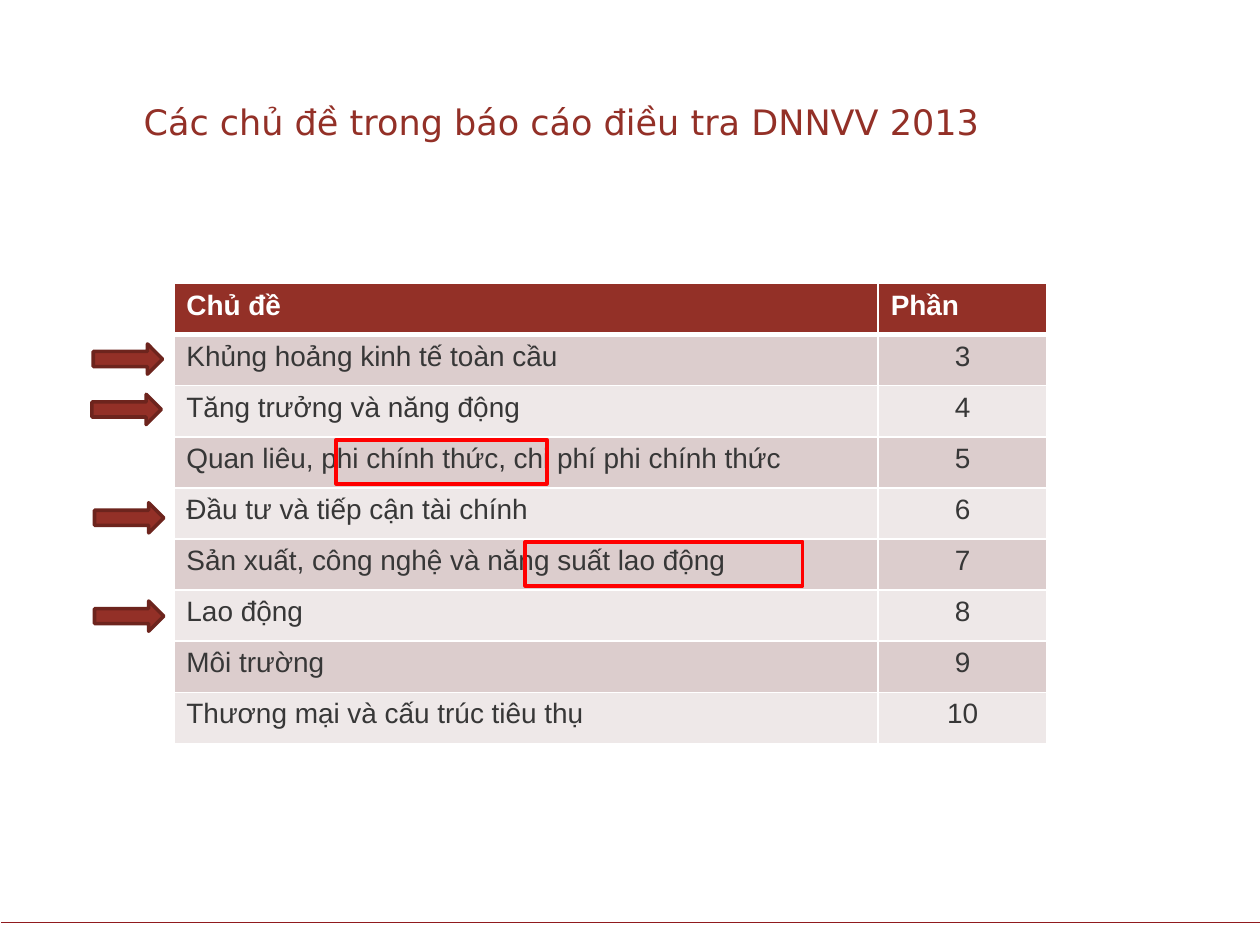
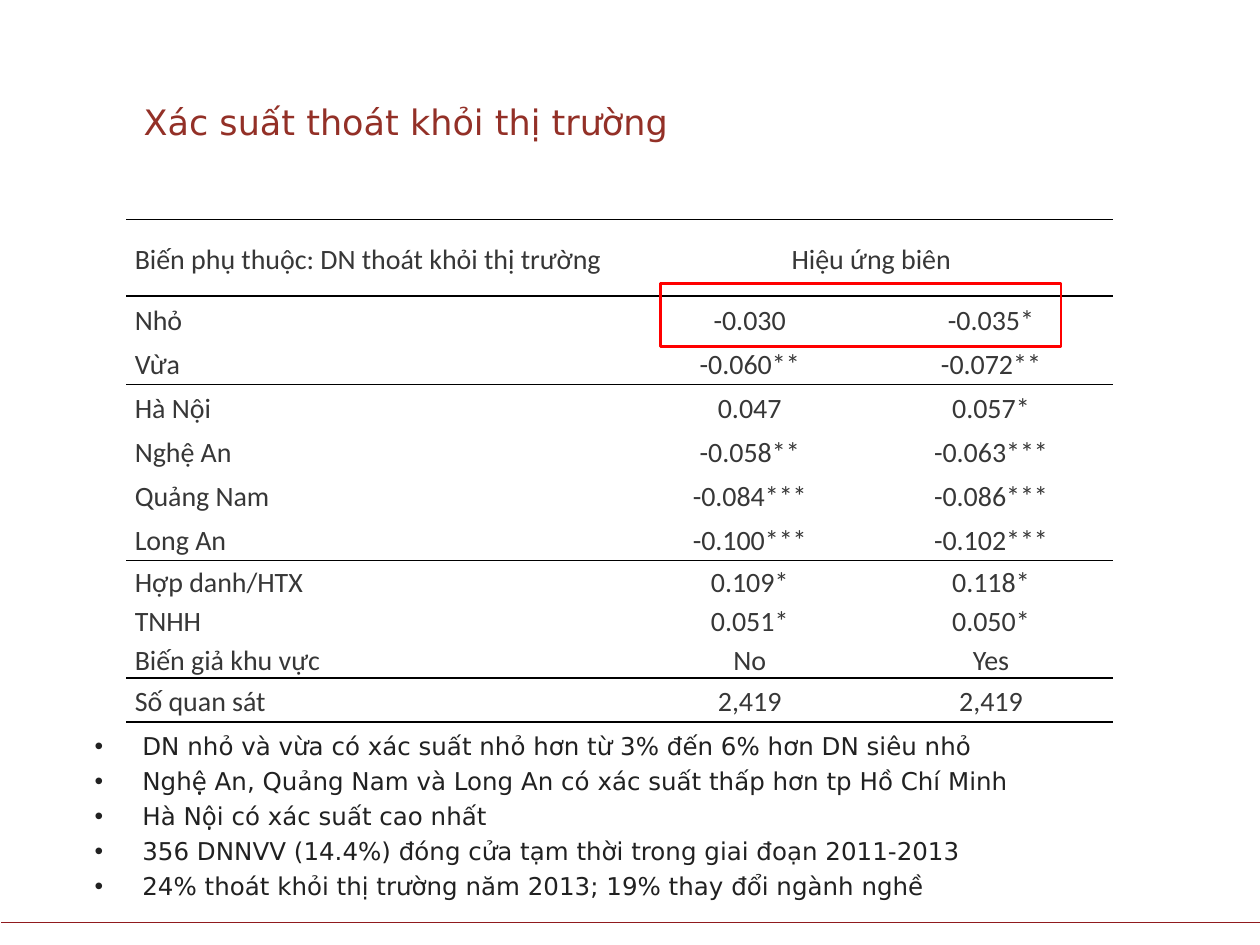
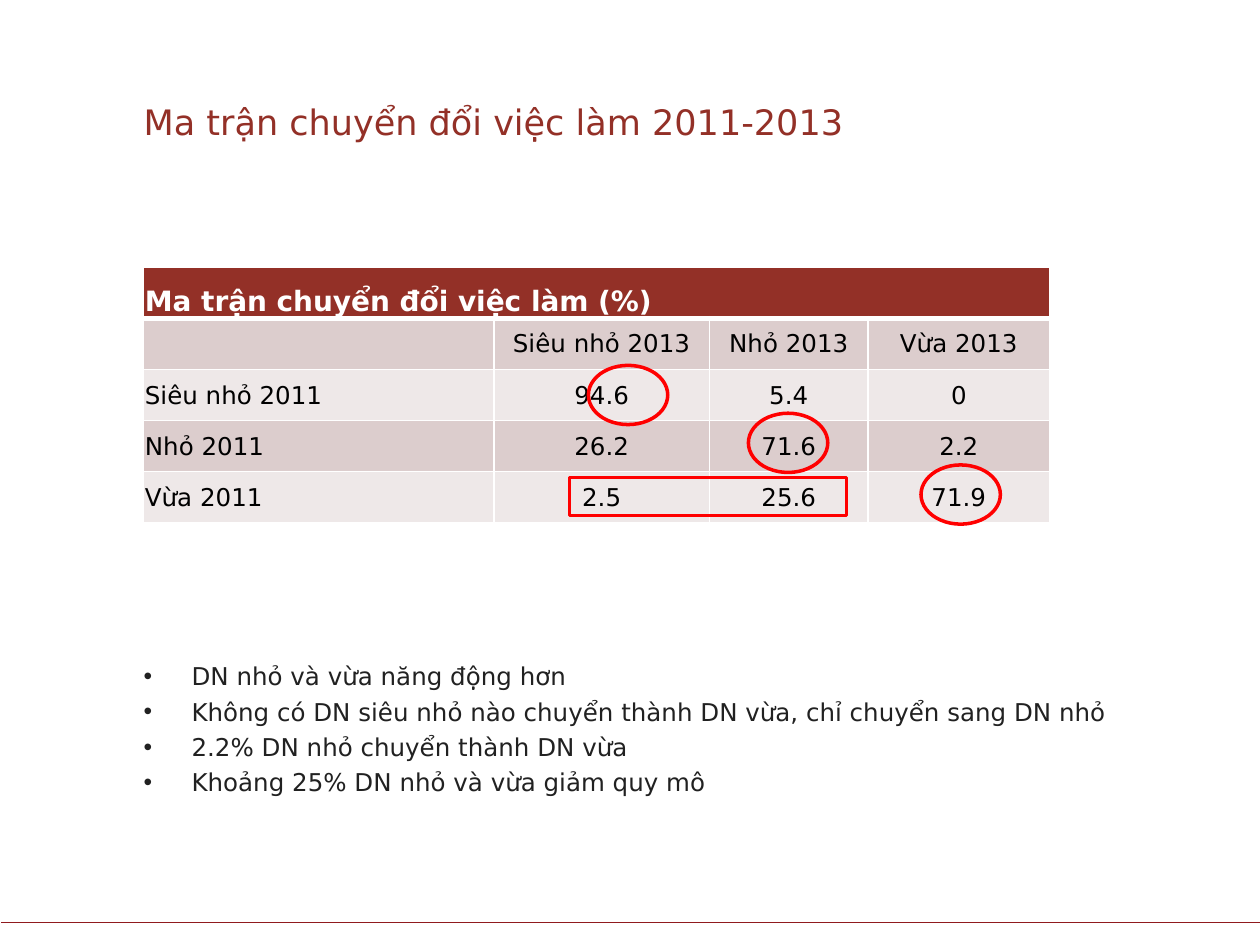
from lxml import etree
from pptx import Presentation
from pptx.dml.color import RGBColor
from pptx.enum.shapes import MSO_CONNECTOR, MSO_SHAPE
from pptx.enum.text import MSO_ANCHOR, PP_ALIGN
from pptx.oxml.ns import qn
from pptx.util import Inches, Pt

STRAIGHT = MSO_CONNECTOR.STRAIGHT
ARROW, RECTANGLE, OVAL = MSO_SHAPE.RIGHT_ARROW, MSO_SHAPE.RECTANGLE, MSO_SHAPE.OVAL
TOP, MIDDLE, BOTTOM = MSO_ANCHOR.TOP, MSO_ANCHOR.MIDDLE, MSO_ANCHOR.BOTTOM
LEFT, CENTER = PP_ALIGN.LEFT, PP_ALIGN.CENTER

BRICK, DARK_BRICK, FOOTER_RED = "933027", "6D241D", "901A1E"
BANDS = ["DCCDCD", "EEE8E8"]
WHITE, BLACK, RED = "FFFFFF", "000000", "FF0000"
GREY, BODY_GREY = "373737", "212121"
SANS = "DejaVu Sans"


def rgb(value):
    return RGBColor.from_string(value)


def boxed(left, top, width, height):
    return Inches(left), Inches(top), Inches(width), Inches(height)


def draw_border(cell, side, color, width):
    line = etree.SubElement(cell._tc.get_or_add_tcPr(), qn(f"a:ln{side}"), w=str(Pt(width)))
    if width:
        fill = etree.SubElement(line, qn("a:solidFill"))
        etree.SubElement(fill, qn("a:srgbClr"), val=color)
    else:
        etree.SubElement(line, qn("a:noFill"))


class Deck:
    def __init__(self):
        self.presentation = Presentation()
        self.presentation.slide_width = Inches(10)
        self.presentation.slide_height = Inches(7.5)
        self.slide = None

    def new_slide(self, title):
        self.slide = self.presentation.slides.add_slide(self.presentation.slide_layouts[6])
        footer = self.slide.shapes.add_connector(
            STRAIGHT, Inches(10.01), Inches(7.32), Inches(0.01), Inches(7.32))
        footer.line.color.rgb = rgb(FOOTER_RED)
        footer.line.width = Pt(0.75)
        etree.SubElement(footer._element.spPr, qn("a:effectLst"))
        frame = self.text_frame((1.14, 0.5, 7.19, 0.63), BOTTOM)
        self.add_text(frame.paragraphs[0], title, 20, BRICK)

    def text_frame(self, box, anchor=TOP):
        frame = self.slide.shapes.add_textbox(*boxed(*box)).text_frame
        frame.word_wrap = True
        frame.vertical_anchor = anchor
        frame.margin_left = frame.margin_right = 0
        frame.margin_top = frame.margin_bottom = 0
        return frame

    def add_text(self, paragraph, text, size, color, font=SANS, bold=False):
        run = paragraph.add_run()
        run.text = text
        run.font.size = Pt(size)
        run.font.name = font
        run.font.bold = bold
        run.font.color.rgb = rgb(color)

    def bullets(self, box, points):
        frame = self.text_frame(box)
        for index, point in enumerate(points):
            paragraph = frame.add_paragraph() if index else frame.paragraphs[0]
            if index:
                paragraph.space_before = Pt(3.3)
            properties = paragraph._p.get_or_add_pPr()
            properties.set("marL", str(Inches(0.38)))
            properties.set("indent", str(-Inches(0.38)))
            etree.SubElement(properties, qn("a:buFont"), typeface="Arial")
            etree.SubElement(properties, qn("a:buChar"), char="•")
            self.add_text(paragraph, point, 14, BODY_GREY)

    def mark(self, kind, box, line=RED, width=2, fill=None):
        shape = self.slide.shapes.add_shape(kind, *boxed(*box))
        shape.shadow.inherit = False
        shape.line.color.rgb = rgb(line)
        shape.line.width = Pt(width)
        if fill:
            shape.fill.solid()
            shape.fill.fore_color.rgb = rgb(fill)
        else:
            shape.fill.background()

    def table(self, corner, widths, heights, rows, rules, rule_color, side_width,
              margins, style, anchors, spacing=None, span=None):
        box = boxed(*corner, sum(widths), sum(heights))
        table = self.slide.shapes.add_table(len(rows), len(widths), *box).table
        table.first_row = table.horz_banding = False
        for column, width in zip(table.columns, widths):
            column.width = Inches(width)
        for row, height in zip(table.rows, heights):
            row.height = Inches(height)
        if span:
            table.cell(0, span[0]).merge(table.cell(0, span[1]))
        for r, texts in enumerate(rows):
            for c in range(len(widths)):
                cell = table.cell(r, c)
                for side, width in (("L", side_width), ("R", side_width),
                                    ("T", rules[r]), ("B", rules[r + 1])):
                    draw_border(cell, side, rule_color, width)
                look = style(r)
                if look["fill"]:
                    cell.fill.solid()
                    cell.fill.fore_color.rgb = rgb(look["fill"])
                else:
                    cell.fill.background()
                cell.margin_left, cell.margin_top, cell.margin_right, cell.margin_bottom = map(
                    Inches, margins)
                cell.vertical_anchor = anchors[min(r, 1)]
                paragraph = cell.text_frame.paragraphs[0]
                paragraph.alignment = CENTER if c and (r or look["center_header"]) else LEFT
                if spacing:
                    paragraph.line_spacing = spacing
                if c < len(texts) and texts[c]:
                    self.add_text(paragraph, texts[c], *look["text"])


def banded(header_text, body_text):
    def style(row):
        return {"fill": BANDS[(row - 1) % 2] if row else BRICK,
                "text": body_text if row else header_text,
                "center_header": False}
    return style


def plain(row):
    return {"fill": None, "text": (16, GREY, "Calibri"), "center_header": True}


def topics_slide(deck):
    deck.new_slide("Các chủ đề trong báo cáo điều tra DNNVV 2013")
    topics = ["Khủng hoảng kinh tế toàn cầu", "Tăng trưởng và năng động",
              "Quan liêu, phi chính thức, chi phí phi chính thức",
              "Đầu tư và tiếp cận tài chính",
              "Sản xuất, công nghệ và năng suất lao động",
              "Lao động", "Môi trường", "Thương mại và cấu trúc tiêu thụ"]
    rows = [("Chủ đề", "Phần")]
    rows += [(topic, str(section)) for section, topic in enumerate(topics, 3)]
    deck.table((1.38, 2.25), [5.59, 1.34], [3.65 / 9] * 9, rows,
               [1, 3] + [1] * 8, WHITE, 1, (0.1, 0.05, 0.1, 0.05),
               banded((16, WHITE, "Arial", True), (16, GREY, "Arial")), (TOP, TOP))
    for left, top in ((0.74, 2.73), (0.73, 3.13), (0.75, 3.99), (0.75, 4.77)):
        deck.mark(ARROW, (left, top, 0.55, 0.24), DARK_BRICK, 2, BRICK)
    deck.mark(RECTANGLE, (2.67, 3.49, 1.67, 0.35), width=2.25)
    deck.mark(RECTANGLE, (4.17, 4.3, 2.2, 0.35), width=2.25)


def exit_slide(deck):
    deck.new_slide("Xác suất thoát khỏi thị trường")
    rows = [
        ("Biến phụ thuộc: DN thoát khỏi thị trường", "Hiệu ứng biên"),
        ("Nhỏ", "-0.030", "-0.035*"),
        ("Vừa", "-0.060**", "-0.072**"),
        ("Hà Nội", "0.047", "0.057*"),
        ("Nghệ An", "-0.058**", "-0.063***"),
        ("Quảng Nam", "-0.084***", "-0.086***"),
        ("Long An", "-0.100***", "-0.102***"),
        ("Hợp danh/HTX", "0.109*", "0.118*"),
        ("TNHH", "0.051*", "0.050*"),
        ("Biến giả khu vực", "No", "Yes"),
        ("Số quan sát", "2,419", "2,419"),
    ]
    group_edges = {0, 1, 3, 7, 10, 11}
    rules = [int(edge in group_edges) for edge in range(len(rows) + 1)]
    deck.table((1, 1.74), [4, 1.9, 1.93], [0.61] + [0.35] * 6 + [0.31] * 3 + [0.35], rows,
               rules, BLACK, 0, (0.07, 0, 0.07, 0), plain, (MIDDLE, MIDDLE),
               spacing=1.15, span=(1, 2))
    deck.bullets((0.75, 5.8, 8.35, 1.42), [
        "DN nhỏ và vừa có xác suất nhỏ hơn từ 3% đến 6% hơn DN siêu nhỏ",
        "Nghệ An, Quảng Nam và Long An có xác suất thấp hơn tp Hồ Chí Minh",
        "Hà Nội có xác suất cao nhất",
        "356 DNNVV (14.4%) đóng cửa tạm thời trong giai đoạn 2011-2013",
        "24% thoát khỏi thị trường năm 2013; 19% thay đổi ngành nghề",
    ])
    deck.mark(RECTANGLE, (5.24, 2.25, 3.18, 0.5), width=1.5)


def transition_slide(deck):
    deck.new_slide("Ma trận chuyển đổi việc làm 2011-2013")
    rows = [
        ("Ma trận chuyển đổi việc làm (%)",),
        ("", "Siêu nhỏ 2013", "Nhỏ 2013", "Vừa 2013"),
        ("Siêu nhỏ 2011", "94.6", "5.4", "0"),
        ("Nhỏ 2011", "26.2", "71.6", "2.2"),
        ("Vừa 2011", "2.5", "25.6", "71.9"),
    ]
    deck.table((1.14, 2.12), [2.78, 1.71, 1.26, 1.44], [2.03 / 5] * 5, rows,
               [1, 3, 1, 1, 1, 1], WHITE, 1, (0.01, 0.01, 0.01, 0),
               banded((16, WHITE, SANS, True), (14, BLACK)), (BOTTOM, MIDDLE), span=(0, 3))
    for left, top in ((4.67, 2.9), (5.94, 3.28), (7.31, 3.69)):
        deck.mark(OVAL, (left, top, 0.63, 0.47))
    deck.mark(RECTANGLE, (4.52, 3.79, 2.2, 0.3))
    deck.bullets((1.14, 5.25, 7.95, 1.34), [
        "DN nhỏ và vừa năng động hơn",
        "Không có DN siêu nhỏ nào chuyển thành DN vừa, chỉ chuyển sang DN nhỏ",
        "2.2% DN nhỏ chuyển thành DN vừa",
        "Khoảng 25% DN nhỏ và vừa giảm quy mô",
    ])


def main():
    deck = Deck()
    topics_slide(deck)
    exit_slide(deck)
    transition_slide(deck)
    deck.presentation.save("out.pptx")


if __name__ == "__main__":
    main()
